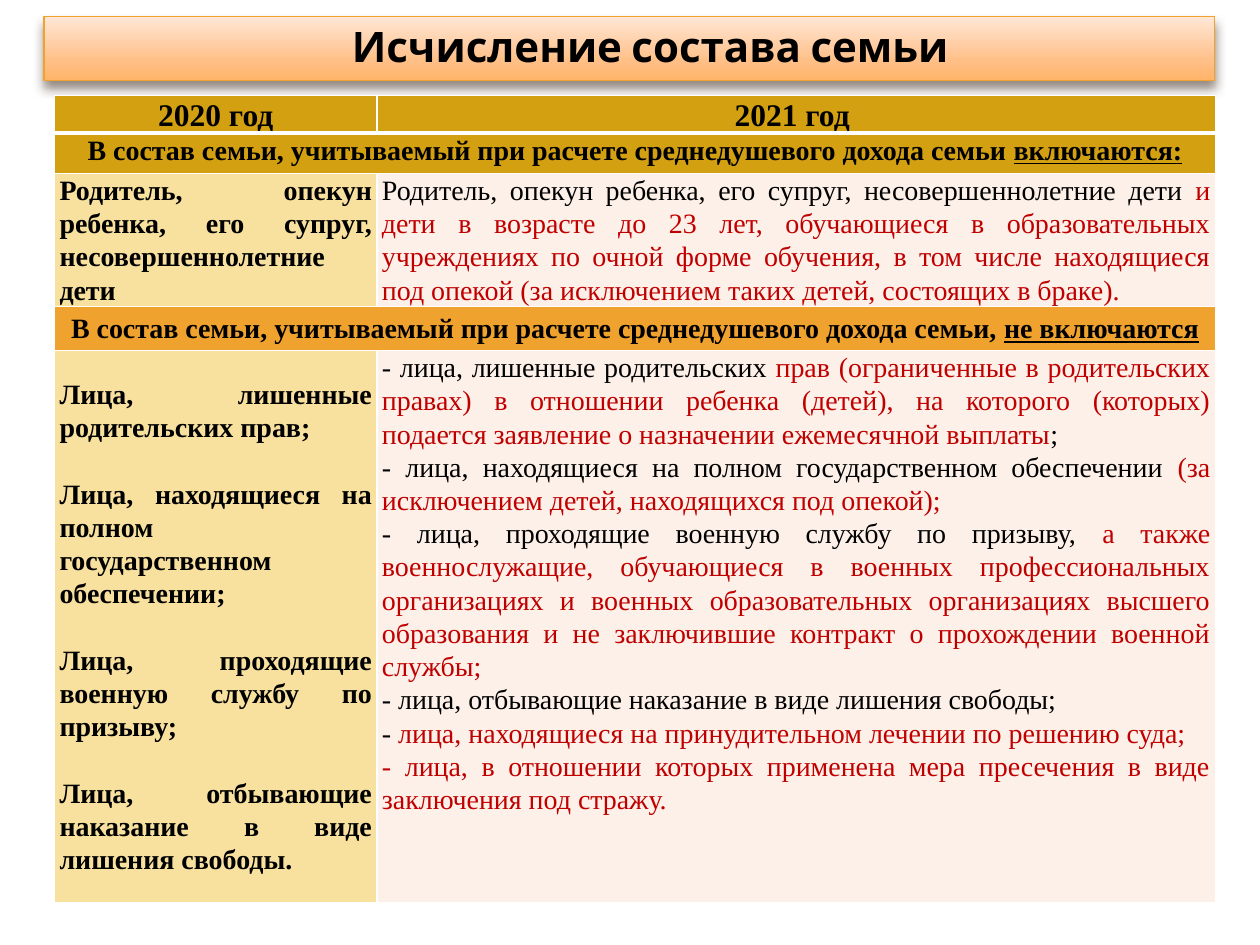
from pptx import Presentation
from pptx.dml.color import RGBColor as Rgb
from pptx.enum.shapes import MSO_SHAPE as Shape
from pptx.enum.text import MSO_ANCHOR as Anchor, PP_ALIGN as Align
from pptx.oxml import parse_xml
from pptx.oxml.ns import nsdecls
from pptx.util import Cm, Pt

COLORS = {
    "black": "000000", "red": "C00000", "white": "FFFFFF",
    "gold": "D2A010", "orange": "F0A22E", "sand": "F8E19F", "cream": "FCF0E8",
    "shadow": "4E3B30", "top": "FFE7D7", "middle": "FFBE84", "bottom": "FFB468",
}
BANNER = (0.89, 0.33, 23.6, 1.3)
INCLUDED = "В состав семьи, учитываемый при расчете среднедушевого дохода семьи"


class SlideBuilder:
    font = "Times New Roman"

    def __init__(self, deck):
        self.page = deck.slides.add_slide(deck.slide_layouts[5])

    def add_text(self, frame, paras, align, spacing, gap=0, **style):
        """Each paragraph is a list of (text, format) spans."""
        for i, spans in enumerate(paras):
            para = frame.paragraphs[0] if i == 0 else frame.add_paragraph()
            values = {"alignment": align, "line_spacing": spacing,
                      "space_before": Pt(gap if i else 0), "space_after": Pt(0)}
            for name, value in values.items():
                setattr(para, name, value)
            for text, extra in spans:
                span = para.add_run()
                span.text = text
                look = {"name": self.font, "size": Pt(16), "bold": False,
                        "color": "black", **style, **extra}
                span.font.color.rgb = Rgb.from_string(COLORS[look.pop("color")])
                for name, value in look.items():
                    setattr(span.font, name, value)

    def banner(self, place, stops):
        box = self.page.shapes.add_shape(Shape.RECTANGLE, *map(Cm, place))
        box.line.color.rgb = Rgb.from_string(COLORS["orange"])
        box.line.width = Pt(0.79)
        box.shadow.inherit = False
        marks = "".join(
            f'<a:gs pos="{pos * 1000}"><a:srgbClr val="{COLORS[name]}"/></a:gs>'
            for pos, name in stops)
        props = box.element.spPr
        props.find(".//{*}prstGeom").addnext(parse_xml(
            f'<a:gradFill {nsdecls("a")} rotWithShape="1"><a:gsLst>{marks}</a:gsLst>'
            '<a:lin ang="5400000" scaled="0"/></a:gradFill>'))
        props.find("{*}effectLst").append(parse_xml(
            f'<a:outerShdw {nsdecls("a")} blurRad="{Pt(6)}" dist="{Pt(4)}" '
            f'dir="5400000" rotWithShape="0"><a:srgbClr val="{COLORS["shadow"]}">'
            '<a:alpha val="60000"/></a:srgbClr></a:outerShdw>'))

    def title(self, place, text):
        box = self.page.shapes.title
        for name, value in zip(("left", "top", "width", "height"), place):
            setattr(box, name, Cm(value))
        # Bring the title in front of the banner
        box.element.getparent().append(box.element)
        frame = box.text_frame
        values = {"margin_left": Cm(1.02), "margin_right": Cm(0.18),
                  "margin_top": Cm(0.18), "margin_bottom": Cm(0.18),
                  "vertical_anchor": Anchor.MIDDLE, "word_wrap": True}
        for name, value in values.items():
            setattr(frame, name, value)
        self.add_text(frame, [[(text, {})]], Align.CENTER, 0.9,
                      name="Cabin", size=Pt(24), bold=True)

    def table(self, left, top, widths, heights):
        table = self.page.shapes.add_table(
            len(heights), len(widths), Cm(left), Cm(top),
            Cm(sum(widths)), Cm(sum(heights))).table
        table.first_row = table.horz_banding = False
        for column, width in zip(table.columns, widths):
            column.width = Cm(width)
        for row, height in zip(table.rows, heights):
            row.height = Cm(height)
        return table

    def borders(self, table, header_width):
        for r, row in enumerate(table.rows):
            for cell in row.cells:
                props = cell._tc.get_or_add_tcPr()
                for i, side in enumerate("LRTB"):
                    thick = (r, side) in ((0, "B"), (1, "T"))
                    props.insert(i, parse_xml(
                        f'<a:ln{side} {nsdecls("a")} w="{Pt(header_width if thick else 1)}">'
                        f'<a:solidFill><a:srgbClr val="{COLORS["white"]}"/></a:solidFill>'
                        f'</a:ln{side}>'))

    def cell(self, cell, fill, paras, align=Align.JUSTIFY,
             anchor=Anchor.MIDDLE, gap=0, **style):
        values = {"margin_left": Cm(0.1), "margin_right": Cm(0.1),
                  "margin_top": 0, "margin_bottom": 0, "vertical_anchor": anchor}
        for name, value in values.items():
            setattr(cell, name, value)
        cell.fill.solid()
        cell.fill.fore_color.rgb = Rgb.from_string(COLORS[fill])
        self.add_text(cell.text_frame, paras, align, 1.07, gap, **style)


def plain(text):
    return text, {}


def red(text):
    return text, {"color": "red"}


def main():
    deck = Presentation()
    deck.slide_width, deck.slide_height = Cm(25.4), Cm(19.05)
    slide = SlideBuilder(deck)

    # Heading
    slide.banner(BANNER, [(0, "top"), (72, "middle"), (100, "bottom")])
    slide.title(BANNER, "Исчисление состава семьи")

    # Comparison table
    table = slide.table(1.1, 1.93, [6.5, 16.9], [0.71, 0.81, 2.64, 0.89, 11.13])
    for column, year in enumerate(["2020 год", "2021 год "]):
        slide.cell(table.cell(0, column), "gold", [[plain(year)]],
                   Align.CENTER, size=Pt(18), bold=True)

    # Section bands across both columns
    bands = [(1, "gold", Anchor.TOP, " ", "включаются:"),
             (3, "orange", Anchor.MIDDLE, ", ", "не включаются")]
    for row, fill, anchor, joint, ending in bands:
        table.cell(row, 0).merge(table.cell(row, 1))
        slide.cell(table.cell(row, 0), fill,
                   [[plain(INCLUDED + joint), (ending, {"underline": True})]],
                   Align.CENTER, anchor, bold=True)

    # Rules of 2020
    old_rules = {
        2: ["Родитель, опекун ребенка, его супруг, несовершеннолетние дети"],
        4: ["Лица, лишенные родительских прав;",
            "Лица, находящиеся на полном государственном обеспечении;",
            "Лица, проходящие военную службу по призыву;",
            "Лица, отбывающие наказание в виде лишения свободы."],
    }
    for row, texts in old_rules.items():
        slide.cell(table.cell(row, 0), "sand", [[plain(text)] for text in texts],
                   gap=19, bold=True)

    # Rules of 2021, changes in red
    new_rules = {
        2: [[plain("Родитель, опекун ребенка, его супруг, несовершеннолетние дети "),
             red("и дети в возрасте до 23 лет, обучающиеся в образовательных "
                 "учреждениях по очной форме обучения, в том числе находящиеся "
                 "под опекой (за исключением таких детей, состоящих в браке).")]],
        4: [[plain("- лица, лишенные родительских "),
             red("прав (ограниченные в родительских правах) в отношении ребенка "
                 "(детей), на которого (которых) подается заявление о назначении "
                 "ежемесячной выплаты"),
             plain(";")],
            [plain("- лица, находящиеся на полном государственном обеспечении "),
             red("(за исключением детей, находящихся под опекой);")],
            [plain("- лица, проходящие военную службу по призыву, "),
             red("а также военнослужащие, обучающиеся в военных профессиональных "
                 "организациях и военных образовательных организациях высшего "
                 "образования и не заключившие контракт о прохождении военной "
                 "службы;")],
            [plain("- лица, отбывающие наказание в виде лишения свободы;")],
            [plain("- "),
             red("лица, находящиеся на принудительном лечении по решению суда;")],
            [red("- лица, в отношении которых применена мера пресечения в виде "
                 "заключения под стражу.")]],
    }
    for row, paras in new_rules.items():
        slide.cell(table.cell(row, 1), "cream", paras, anchor=Anchor.TOP)

    slide.borders(table, header_width=3)
    deck.save("out.pptx")


if __name__ == "__main__":
    main()
